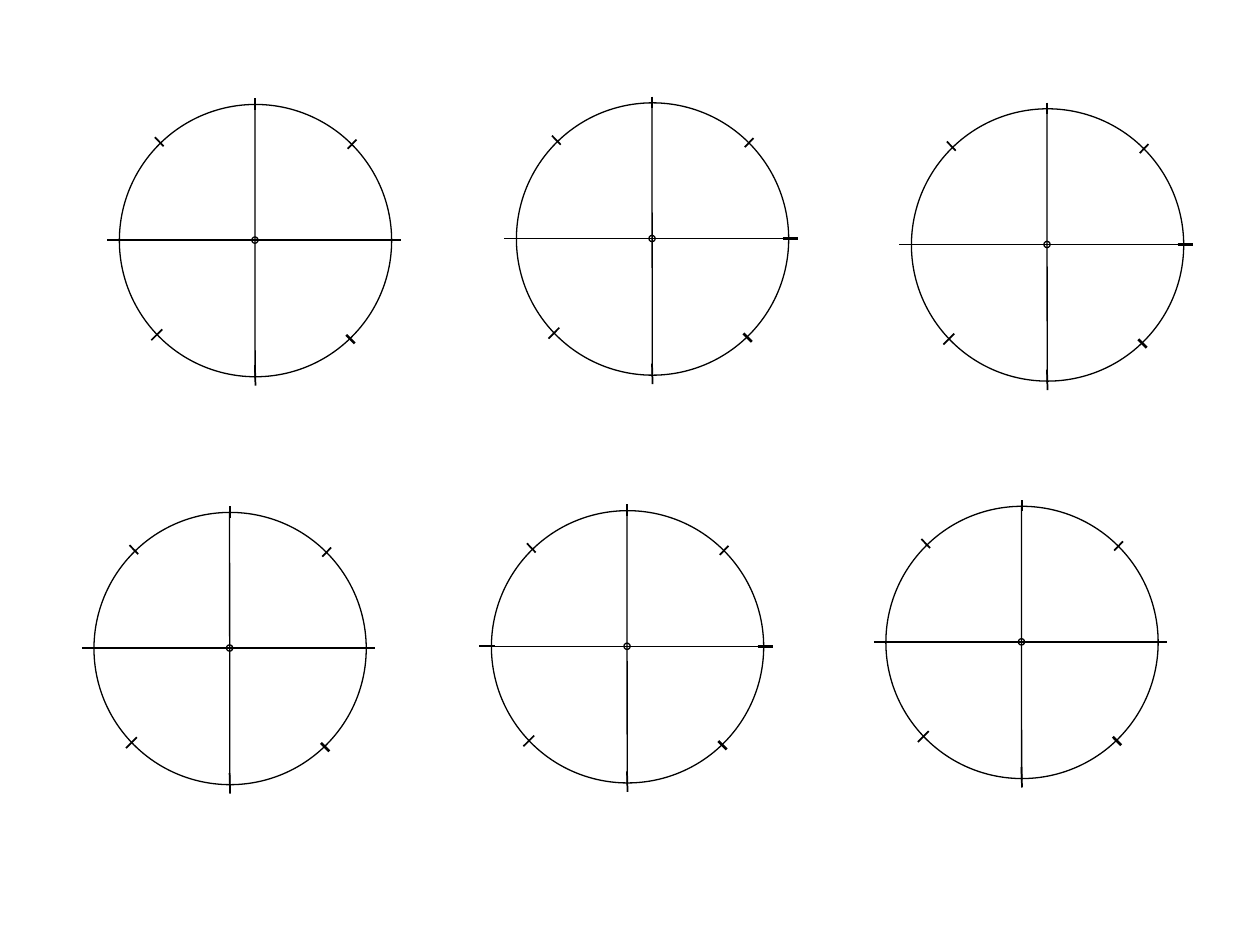
from typing import NamedTuple

from lxml.etree import SubElement as Sub
from pptx import Presentation
from pptx.dml.color import RGBColor
from pptx.enum.shapes import MSO_CONNECTOR as Link, MSO_SHAPE as Kind
from pptx.oxml.ns import qn
from pptx.util import Pt


class Spot(NamedTuple):
    x: float
    y: float


class Stroke(NamedTuple):
    """A line, with its ends measured from the dial centre."""
    x1: float
    y1: float
    x2: float
    y2: float
    width: float


INK = "000000"
RIM = 77.8
HUB = 1.8
THIN, MID, BOLD = 0.75, 1, 1.5

# Dial centres, top row then bottom row
DIALS = [
    Spot(145.7, 137.2), Spot(372.6, 136.3), Spot(598.3, 139.7),
    Spot(131.2, 370.3), Spot(358.3, 369.3), Spot(583.7, 366.8),
]

# Ticks clockwise from the top, then the two axes
STROKES = [
    Stroke(0.1, -81, 0.1, -74.5, MID),
    Stroke(53, -52.2, 58, -57.4, MID),
    Stroke(74.7, 0, 83.3, 0, BOLD),
    Stroke(52.2, 54.2, 57, 59, BOLD),
    Stroke(0, 71.5, 0.3, 83.2, MID),
    Stroke(-53, 51, -59.2, 57.2, MID),
    Stroke(-84.4, 0, -75.5, 0, MID),
    Stroke(-52.2, -53.6, -57.2, -58.8, MID),
    Stroke(0, -78, 0.1, 79, THIN),
    Stroke(-77.5, 0, 78, 0, THIN),
]


def paint(fmt, color: str) -> None:
    """Give a fill a solid colour."""
    fmt.solid()
    fmt.fore_color.rgb = RGBColor.from_string(color)


def ring(group, mid: Spot, r: float):
    """Draw an outlined, unfilled circle."""
    shape = group.shapes.add_shape(
        Kind.OVAL, Pt(mid.x - r), Pt(mid.y - r), Pt(2 * r), Pt(2 * r))
    shape.shadow.inherit = False
    shape.fill.background()
    paint(shape.line.fill, INK)
    shape.line.width = Pt(THIN)
    return shape


def rule(group, mid: Spot, s: Stroke) -> None:
    """Draw one stroke of a dial."""
    line = group.shapes.add_connector(
        Link.STRAIGHT, Pt(mid.x + s.x1), Pt(mid.y + s.y1),
        Pt(mid.x + s.x2), Pt(mid.y + s.y2))
    paint(line.line.fill, INK)
    line.line.width = Pt(s.width)
    Sub(line._element.spPr, qn("a:effectLst"))


def dial(slide, mid: Spot) -> None:
    """Draw a circle with its hub, ticks and axes."""
    group = slide.shapes.add_group_shape()
    ring(group, Spot(mid.x + 0.3, mid.y + 0.3), RIM)
    hub = ring(group, mid, HUB)
    paint(hub.fill, "F8F8F8")
    tint = hub._element.spPr.find(qn("a:solidFill"))[0]
    Sub(tint, qn("a:alpha"), val="50000")
    for s in STROKES:
        rule(group, mid, s)


def main() -> None:
    deck = Presentation()
    deck.slide_width, deck.slide_height = Pt(720), Pt(540)
    slide = deck.slides.add_slide(deck.slide_layouts[6])
    for mid in DIALS:
        dial(slide, mid)
    deck.save("out.pptx")


if __name__ == "__main__":
    main()
